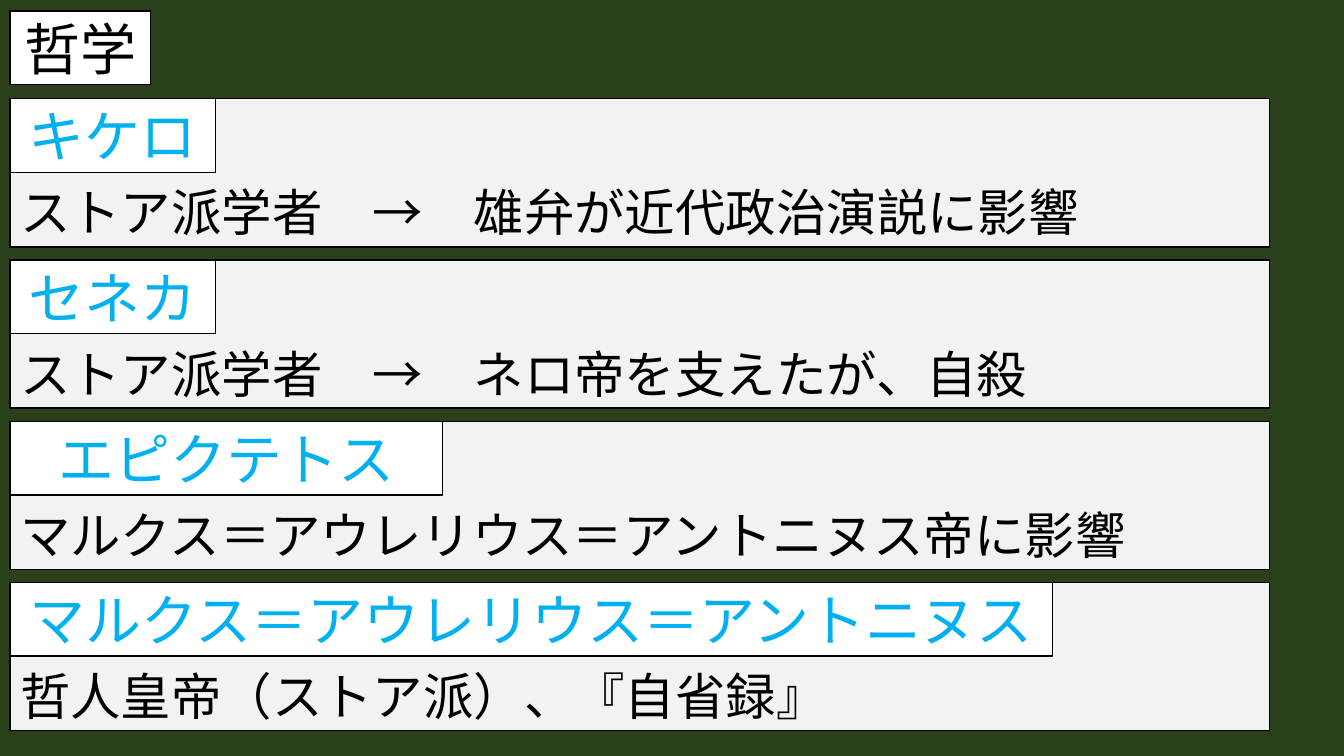
from dataclasses import dataclass

import pptx
import pptx.dml.color
import pptx.enum.shapes
import pptx.enum.text
import pptx.util

PX = 9144
LEFT = 10
TITLE_TOP = 11
TITLE_WIDTH = 139
LABEL_HEIGHT = 73
PANEL_TOP = 98
PANEL_STEP = 160
PANEL_WIDTH = 1249
PANEL_HEIGHT = 147

BLACK = "000000"
WHITE = "FFFFFF"
GREY = "F2F2F2"
BLUE = "00B0F0"
GREEN = "29401A"

ANCHOR = pptx.enum.text.MSO_ANCHOR
ALIGN = pptx.enum.text.PP_ALIGN


@dataclass
class BoxStyle:
    fill: str
    color: str
    size: int
    anchor: ANCHOR
    align: ALIGN


@dataclass
class Philosopher:
    name: str
    label_width: int
    note: str


TITLE = BoxStyle(WHITE, BLACK, 40, ANCHOR.MIDDLE, ALIGN.CENTER)
LABEL = BoxStyle(WHITE, BLUE, 40, ANCHOR.MIDDLE, ALIGN.CENTER)
PANEL = BoxStyle(GREY, BLACK, 36, ANCHOR.BOTTOM, ALIGN.LEFT)

PHILOSOPHERS = [
    Philosopher("キケロ", 204, "ストア派学者　→　雄弁が近代政治演説に影響"),
    Philosopher("セネカ", 204, "ストア派学者　→　ネロ帝を支えたが、自殺"),
    Philosopher("エピクテトス", 429, "マルクス＝アウレリウス＝アントニヌス帝に影響"),
    Philosopher("マルクス＝アウレリウス＝アントニヌス", 1034, "哲人皇帝（ストア派）、『自省録』"),
]


def rgb(value: str) -> pptx.dml.color.RGBColor:
    return pptx.dml.color.RGBColor.from_string(value)


def px(length: int) -> pptx.util.Emu:
    return pptx.util.Emu(length * PX)


def add_box(s: pptx.slide.Slide, top: int, width: int, height: int, text: str, style: BoxStyle) -> None:
    sp = s.shapes.add_shape(
        pptx.enum.shapes.MSO_SHAPE.RECTANGLE, px(LEFT), px(top), px(width), px(height)
    )
    sp.shadow.inherit = False
    sp.fill.solid()
    sp.fill.fore_color.rgb = rgb(style.fill)
    sp.line.color.rgb = rgb(BLACK)
    sp.line.width = pptx.util.Pt(1)
    tf = sp.text_frame
    tf.word_wrap = True
    tf.vertical_anchor = style.anchor
    p = tf.paragraphs[0]
    p.alignment = style.align
    r = p.add_run()
    r.text = text
    r.font.name = "Roboto"
    r.font.size = pptx.util.Pt(style.size)
    r.font.color.rgb = rgb(style.color)


def main() -> None:
    prs = pptx.Presentation()
    prs.slide_width = px(1333)
    prs.slide_height = px(750)
    s = prs.slides.add_slide(prs.slide_layouts[6])
    s.background.fill.solid()
    s.background.fill.fore_color.rgb = rgb(GREEN)

    add_box(s, TITLE_TOP, TITLE_WIDTH, LABEL_HEIGHT, "哲学", TITLE)
    for i, philosopher in enumerate(PHILOSOPHERS):
        top = PANEL_TOP + i * PANEL_STEP
        add_box(s, top, PANEL_WIDTH, PANEL_HEIGHT, philosopher.note, PANEL)
        add_box(s, top, philosopher.label_width, LABEL_HEIGHT, philosopher.name, LABEL)

    prs.save("out.pptx")


if __name__ == "__main__":
    main()
